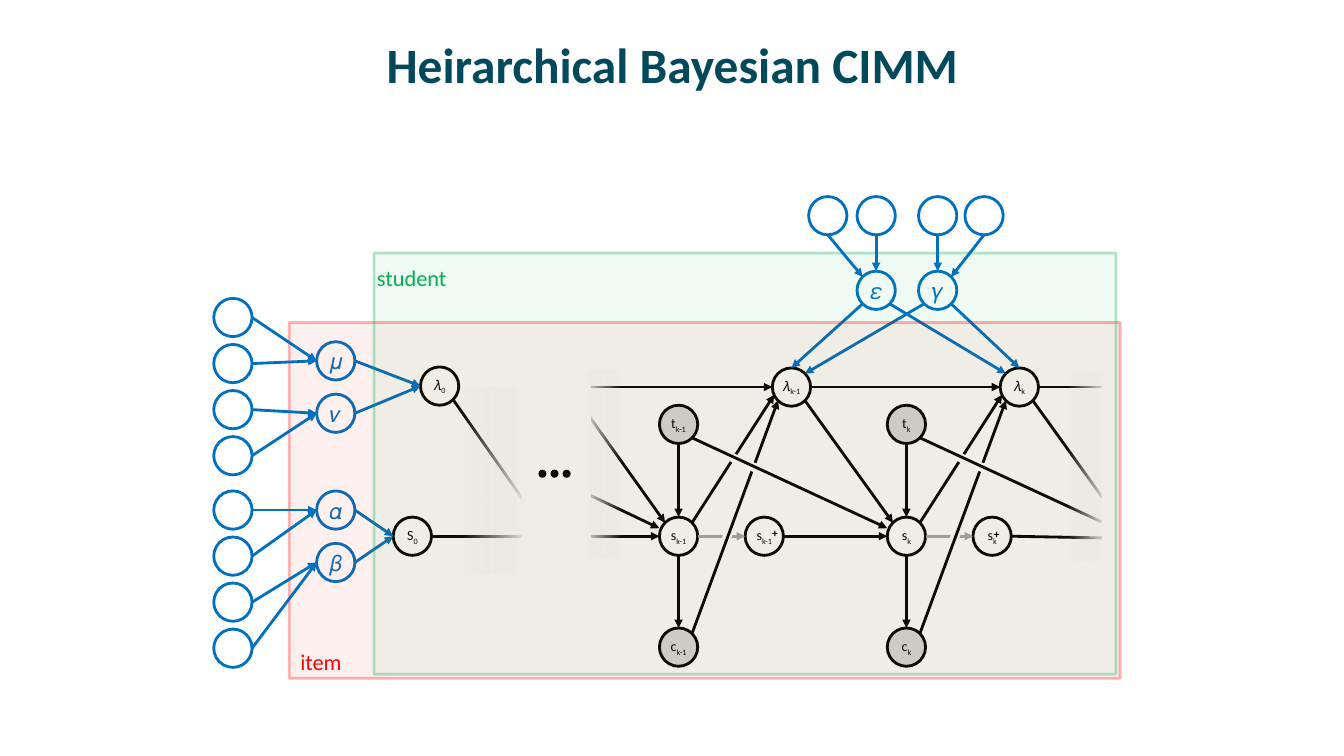
from dataclasses import dataclass
from pptx import Presentation
from pptx.dml.color import RGBColor as Rgb
from pptx.enum.shapes import MSO_CONNECTOR as Link, MSO_SHAPE as Preset
from pptx.enum.text import MSO_ANCHOR as Anchor, MSO_AUTO_SIZE as Fit, PP_ALIGN as Align
from pptx.oxml.ns import qn
from pptx.util import Cm, Pt


@dataclass(frozen=True)
class Theme:
    font: str = "Calibri"
    title: str = "03495C"
    prior: str = "0070C0"
    ink: str = "000000"
    observed: str = "D9D9D9"
    faint: str = "A6A6A6"
    student: str = "00B050"
    item: str = "FF0000"
    paper: str = "FFFFFF"
    mist: str = "F1F8FE"
    title_size: float = 35.3
    label_size: float = 16
    node_size: float = 10
    plus_size: float = 8
    stroke: float = 2


RADIUS = 0.19
PERIOD = 2.26  # distance between step k-1 and step k
DIAGONAL = 0.7
PORTS = {"N": (0, -1), "S": (0, 1), "W": (-1, 0), "E": (1, 0),
         "NW": (-DIAGONAL, -DIAGONAL), "NE": (DIAGONAL, -DIAGONAL),
         "SW": (-DIAGONAL, DIAGONAL), "SE": (DIAGONAL, DIAGONAL),
         "WSW": (-0.9, 0.4), "WNW": (-1, -0.42)}


def lengths(*inches):
    return [Cm(value * 2.54) for value in inches]


class Diagram:
    def __init__(self, slide, theme):
        self.slide, self.theme, self.centres = slide, theme, {}

    def style(self, run, size, colour, bold=False):
        run.font.name, run.font.size, run.font.bold = self.theme.font, Pt(size), bold
        run.font.color.rgb = Rgb.from_string(colour)

    def title(self, words):
        heading = self.slide.shapes.title
        heading.left, heading.top, heading.width, heading.height = lengths(0.67, 0.17, 12, 0.92)
        frame = heading.text_frame
        frame.text, frame.vertical_anchor, frame.auto_size = words, Anchor.MIDDLE, Fit.NONE
        frame.paragraphs[0].alignment = Align.CENTER
        self.style(frame.paragraphs[0].runs[0], self.theme.title_size, self.theme.title, True)

    def shape(self, preset, box, fill=None, line=None, turn=0):
        shape = self.slide.shapes.add_shape(preset, *lengths(*box))
        shape.shadow.inherit = False
        shape.rotation = turn
        if fill:
            shape.fill.solid()
            shape.fill.fore_color.rgb = Rgb.from_string(fill)
        else:
            shape.fill.background()
        if line:
            shape.line.color.rgb = Rgb.from_string(line)
            shape.line.width = Pt(self.theme.stroke)
        else:
            shape.line.fill.background()
        return shape

    def opacity(self, shape, *percents):
        """Set opacity on the shape's colours in order: fill, then line."""
        for colour, percent in zip(shape._element.spPr.iter(qn("a:srgbClr")), percents):
            alpha = colour.makeelement(qn("a:alpha"), {"val": str(percent * 1000)})
            colour.append(alpha)

    def node(self, name, x, y, symbol="", sub="", colour=None, fill=None):
        self.centres[name] = x, y
        colour = colour or self.theme.ink
        circle = self.shape(Preset.OVAL, (x - RADIUS, y - RADIUS, 2 * RADIUS, 2 * RADIUS), fill, colour)
        if not symbol:
            return
        frame = circle.text_frame
        frame.margin_left = frame.margin_right = frame.margin_top = frame.margin_bottom = 0
        frame.vertical_anchor = Anchor.MIDDLE
        frame.text = symbol
        paragraph = frame.paragraphs[0]
        paragraph.alignment = Align.CENTER
        size = self.theme.node_size if sub else self.theme.label_size
        self.style(paragraph.runs[0], size, colour)
        if sub:
            subscript = paragraph.add_run()
            subscript.text = sub
            self.style(subscript, size, colour)
            subscript._r.get_or_add_rPr().set("baseline", "-25000")

    def point(self, end):
        """Accept an (x, y) pair or 'node:port'."""
        if isinstance(end, tuple):
            return end
        name, port = end.split(":")
        (x, y), (dx, dy) = self.centres[name], PORTS[port]
        return x + RADIUS * dx, y + RADIUS * dy

    def arrow(self, start, end, colour=None, head=True):
        link = self.slide.shapes.add_connector(
            Link.STRAIGHT, *lengths(*self.point(start), *self.point(end)))
        link.line.color.rgb = Rgb.from_string(colour or self.theme.ink)
        link.line.width = Pt(self.theme.stroke)
        properties = link._element.spPr
        if head:
            stroke = properties.find(qn("a:ln"))
            stroke.append(stroke.makeelement(qn("a:tailEnd"), {"type": "triangle"}))
        properties.append(properties.makeelement(qn("a:effectLst"), {}))

    def gap(self, x, y, turn):
        self.shape(Preset.RECTANGLE, (x, y, 0.09, 0.09), self.theme.paper, turn=turn)

    def fade(self, box, turn=0):
        veil = self.shape(Preset.RECTANGLE, box, turn=turn)
        veil.fill.gradient()
        veil.fill.gradient_angle = 180
        for stop, colour, position in zip(veil.fill.gradient_stops,
                                          (self.theme.mist, self.theme.paper), (0, 1)):
            stop.color.rgb, stop.position = Rgb.from_string(colour), position
        self.opacity(veil, 0)

    def plate(self, box, colour):
        self.opacity(self.shape(Preset.RECTANGLE, box, colour, colour), 6, 30)

    def label(self, words, box, size, colour, bold=False):
        frame = self.slide.shapes.add_textbox(*lengths(*box)).text_frame
        frame.text, frame.word_wrap, frame.auto_size = words, False, Fit.SHAPE_TO_FIT_TEXT
        self.style(frame.paragraphs[0].runs[0], size, colour, bold)


def main():
    deck = Presentation()
    deck.slide_width, deck.slide_height = lengths(13.33, 7.5)
    theme = Theme()
    model = Diagram(deck.slides.add_slide(deck.slide_layouts[5]), theme)
    model.title("Heirarchical Bayesian CIMM")

    # Prior and starting nodes
    for symbol, x, y in (("𝜀", 8.69, 2.88), ("𝛾", 9.3, 2.88), ("𝜇", 3.33, 3.58),
                         ("𝜈", 3.33, 4.1), ("𝛼", 3.33, 5.06), ("𝛽", 3.33, 5.58)):
        model.node(symbol, x, y, symbol, colour=theme.prior)
    model.node("S0", 4.09, 5.32, "S", "0")
    model.node("λ0", 4.36, 3.83, "𝜆", "0")

    # Nodes of the two steps
    steps = ("k-1", "k")
    for number, step in enumerate(steps):
        x = 6.73 + number * PERIOD
        model.node("t" + step, x, 4.21, "t", step, fill=theme.observed)
        model.node("s" + step, x, 5.32, "s", step)
        model.node("c" + step, x, 6.42, "c", step, fill=theme.observed)
        model.node("plus" + step, x + 0.85, 5.32, "s", step)
        model.node("λ" + step, x + 1.12, 3.84, "𝜆", step)

    # Links coming from earlier steps, between steps and towards later steps
    for start, end in (((5.78, 5.32), "sk-1:W"), ((5.76, 4.87), "sk-1:WNW"),
                       ((5.78, 3.84), "λk-1:W"), ((5.73, 3.97), "sk-1:NW"),
                       ("plusk-1:E", "sk:W"), ("λk-1:SE", "sk:NW"), ("λk-1:E", "λk:W"),
                       ("λk:E", (11.21, 3.84)), ("λk:SE", (11.11, 5.18)),
                       ("plusk:E", (11.11, 5.34))):
        model.arrow(start, end)

    # Links within each step, with gaps where they cross
    for number, (step, later) in enumerate(zip(steps, ("sk:WNW", (11.06, 5.24)))):
        shift = number * PERIOD
        model.arrow(f"t{step}:S", f"s{step}:N")
        model.arrow(f"s{step}:S", f"c{step}:N")
        model.arrow(f"s{step}:E", f"plus{step}:W", theme.faint)
        model.gap(7.17 + shift, 5.27, 18.5)
        model.arrow(f"c{step}:NE", f"λ{step}:SW")
        model.arrow(f"s{step}:NE", f"λ{step}:WSW")
        model.gap(7.23 + shift, 4.5, 30)
        model.gap(7.43 + shift, 4.59, 111.1)
        model.arrow(f"t{step}:SE", later)
    model.arrow("S0:E", (5.31, 5.32), head=False)
    model.arrow("λ0:SE", (5.31, 5.13), head=False)

    # Covers and fades at the breaks in the sequence
    for cover in ((5.21, 3.65, 0.65, 1.86), (5.18, 4.11, 0.43, 1.9), (10.93, 3.42, 0.64, 2.71)):
        model.shape(Preset.RECTANGLE, cover, theme.paper)
    model.fade((5.79, 3.68, 0.37, 1.86))
    model.fade((4.59, 3.84, 0.62, 1.86), 180)
    model.fade((10.59, 3.7, 0.37, 1.86), 180)
    for dot in range(3):
        model.shape(Preset.OVAL, (5.34 + 0.12 * dot, 4.66, 0.08, 0.08), theme.ink)

    # Prior links
    for start, end in (("𝛾:SE", "λk:N"), ("𝜀:SW", "λk-1:N"), ("𝜀:SE", "λk:NW"),
                       ("𝛾:SW", "λk-1:NE"), ("𝛼:E", "S0:W"), ("𝛽:E", "S0:W"),
                       ("𝜇:E", "λ0:W"), ("𝜈:E", "λ0:W")):
        model.arrow(start, end, theme.prior)

    # Item plate and its hyperpriors
    model.label("student", (3.64, 2.57, 0.9, 0.37), theme.label_size, theme.student)
    model.label("item", (2.88, 6.38, 0.62, 0.37), theme.label_size, theme.item)
    model.plate((2.87, 3.2, 8.24, 3.53), theme.item)
    for top, pair in ((3.15, "𝜇𝜈"), (5.06, "𝛼𝛽")):
        for row in range(4):
            hyper = f"{pair}{row}"
            model.node(hyper, 2.31, top + row * 0.457, colour=theme.prior)
            model.arrow(f"{hyper}:E", f"{pair[row // 2]}:W", theme.prior)

    # Student plate and its hyperpriors
    model.plate((3.71, 2.51, 7.36, 4.18), theme.student)
    for x, target in ((8.21, "𝜀:NW"), (8.69, "𝜀:N"), (9.3, "𝛾:N"), (9.76, "𝛾:NE")):
        hyper = f"{target[0]}{x}"
        model.node(hyper, x, 2.14, colour=theme.prior)
        model.arrow(f"{hyper}:S", target, theme.prior)

    # Superscripts of the updated states
    for x, y in ((7.56, 5.17), (9.76, 5.18)):
        model.label("+", (x, y, 0.26, 0.24), theme.plus_size, theme.ink, True)

    deck.save("out.pptx")


if __name__ == "__main__":
    main()
